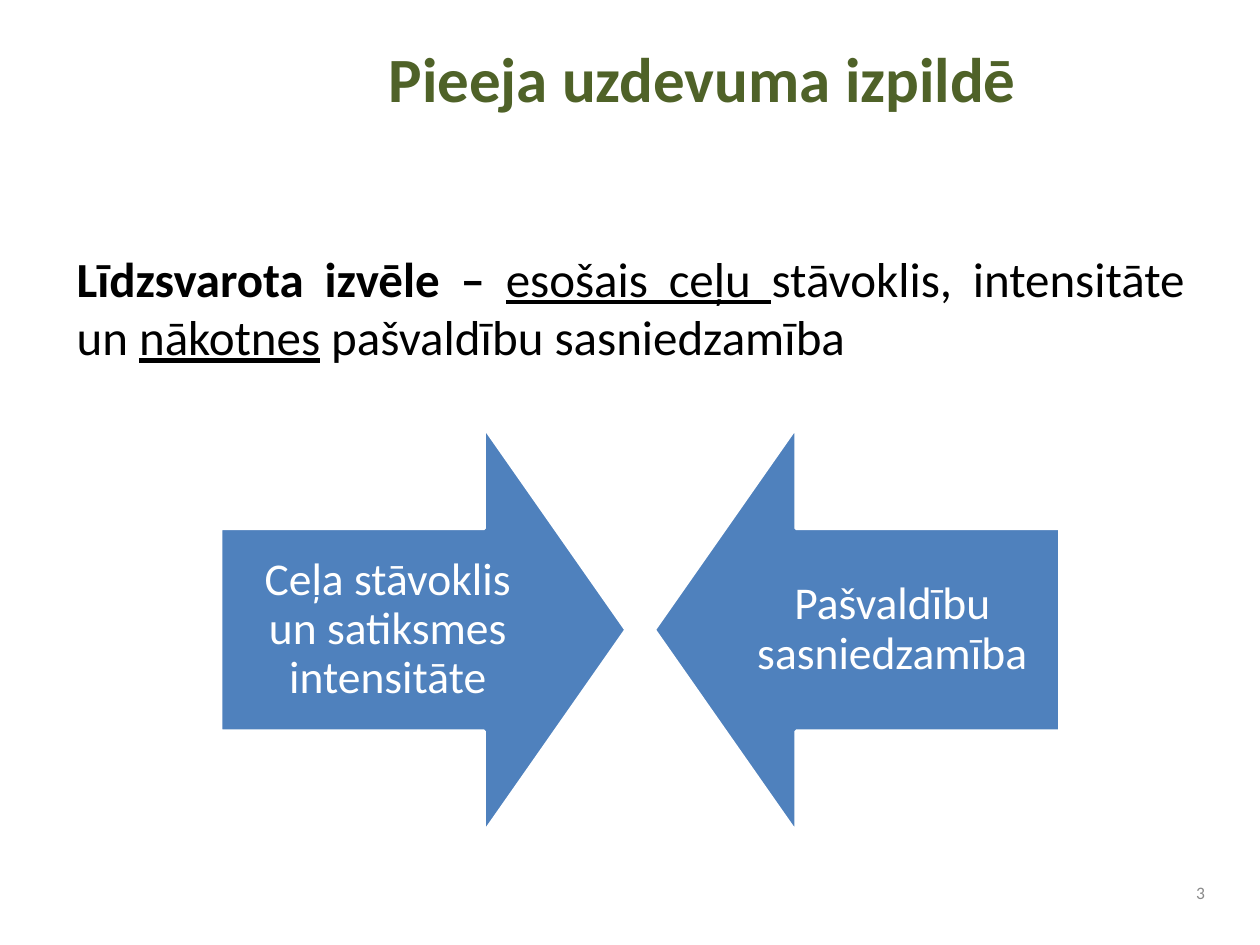
from dataclasses import dataclass

from pptx import Presentation
from pptx.dml.color import RGBColor
from pptx.enum.shapes import MSO_SHAPE
from pptx.enum.text import MSO_ANCHOR, MSO_AUTO_SIZE, PP_ALIGN
from pptx.util import Pt

RIGHT_ARROW, LEFT_ARROW = MSO_SHAPE.RIGHT_ARROW, MSO_SHAPE.LEFT_ARROW
TOP, MIDDLE = MSO_ANCHOR.TOP, MSO_ANCHOR.MIDDLE
CENTER, JUSTIFY, RIGHT = PP_ALIGN.CENTER, PP_ALIGN.JUSTIFY, PP_ALIGN.RIGHT
NO_FIT = MSO_AUTO_SIZE.NONE


@dataclass(frozen=True)
class Theme:
    """Colours, font and type sizes of the slide."""
    font: str = "Calibri"
    title: RGBColor = RGBColor(0x4F, 0x62, 0x28)
    text: RGBColor = RGBColor(0, 0, 0)
    muted: RGBColor = RGBColor(0x89, 0x89, 0x89)
    arrow: RGBColor = RGBColor(0x4F, 0x81, 0xBD)
    white: RGBColor = RGBColor(0xFF, 0xFF, 0xFF)
    title_size: int = 36
    body_size: int = 28
    arrow_size: int = 26
    number_size: int = 10


THEME = Theme()


def style_frame(tf, anchor, inset_x=7.2, inset_y=3.6):
    """Set wrapping, anchor and insets of a text frame."""
    tf.word_wrap = True
    tf.auto_size = NO_FIT
    tf.vertical_anchor = anchor
    tf.margin_left = tf.margin_right = Pt(inset_x)
    tf.margin_top = tf.margin_bottom = Pt(inset_y)


def style_paragraph(p, size, color, align):
    """Set font and alignment of a paragraph."""
    p.alignment = align
    p.font.name = THEME.font
    p.font.size = Pt(size)
    p.font.color.rgb = color


def add_title(s, box, text):
    """Place and format the title placeholder."""
    sp = s.shapes.title
    sp.left, sp.top, sp.width, sp.height = map(Pt, box)
    tf = sp.text_frame
    style_frame(tf, TOP)
    p = tf.paragraphs[0]
    p.text = text
    style_paragraph(p, THEME.title_size, THEME.title, CENTER)
    p.font.bold = True


def add_statement(s, box, runs):
    """Add a justified paragraph from (text, bold, underline) runs."""
    tf = s.shapes.add_textbox(*map(Pt, box)).text_frame
    style_frame(tf, TOP)
    p = tf.paragraphs[0]
    style_paragraph(p, THEME.body_size, THEME.text, JUSTIFY)
    for text, bold, underline in runs:
        r = p.add_run()
        r.text = text
        r.font.bold = bold
        r.font.underline = underline


def add_arrow(s, box, kind, text):
    """Add one labelled block arrow."""
    sp = s.shapes.add_shape(kind, *map(Pt, box))
    sp.adjustments[0], sp.adjustments[1] = 0.5, 0.35
    sp.shadow.inherit = False
    sp.fill.solid()
    sp.fill.fore_color.rgb = THEME.arrow
    sp.line.color.rgb = THEME.white
    sp.line.width = Pt(2)
    tf = sp.text_frame
    style_frame(tf, MIDDLE, 14.4, 14.4)
    p = tf.paragraphs[0]
    p.text = text
    p.line_spacing = 0.9
    style_paragraph(p, THEME.arrow_size, THEME.white, CENTER)


def add_converging_arrows(s, box, left_text, right_text):
    """Place two square arrows facing each other at the ends of the box."""
    x, y, w, side = box
    add_arrow(s, (x, y, side, side), RIGHT_ARROW, left_text)
    add_arrow(s, (x + w - side, y, side, side), LEFT_ARROW, right_text)


def add_page_number(s, box, number):
    """Add the page number."""
    tf = s.shapes.add_textbox(*map(Pt, box)).text_frame
    style_frame(tf, MIDDLE)
    p = tf.paragraphs[0]
    p.text = str(number)
    style_paragraph(p, THEME.number_size, THEME.muted, RIGHT)


def main():
    """Build and save the slide."""
    prs = Presentation()
    prs.slide_width, prs.slide_height = Pt(720), Pt(540)
    s = prs.slides.add_slide(prs.slide_layouts[5])
    add_title(s, (130.3, 18.7, 542.2, 81.4), "Pieeja uzdevuma izpildē")
    add_statement(s, (36.7, 138.2, 647.3, 344.2), [
        ("Līdzsvarota izvēle – ", True, False),
        ("esošais ceļu ", False, True),
        ("stāvoklis, intensitāte un ", False, False),
        ("nākotnes", False, True),
        (" pašvaldību sasniedzamība", False, False),
    ])
    add_page_number(s, (671.8, 498.2, 23.8, 23.8), 3)
    add_converging_arrows(s, (126, 244, 479.6, 231.8),
                          "Ceļa stāvoklis un satiksmes intensitāte",
                          "Pašvaldību sasniedzamība")
    prs.save("out.pptx")


if __name__ == "__main__":
    main()
